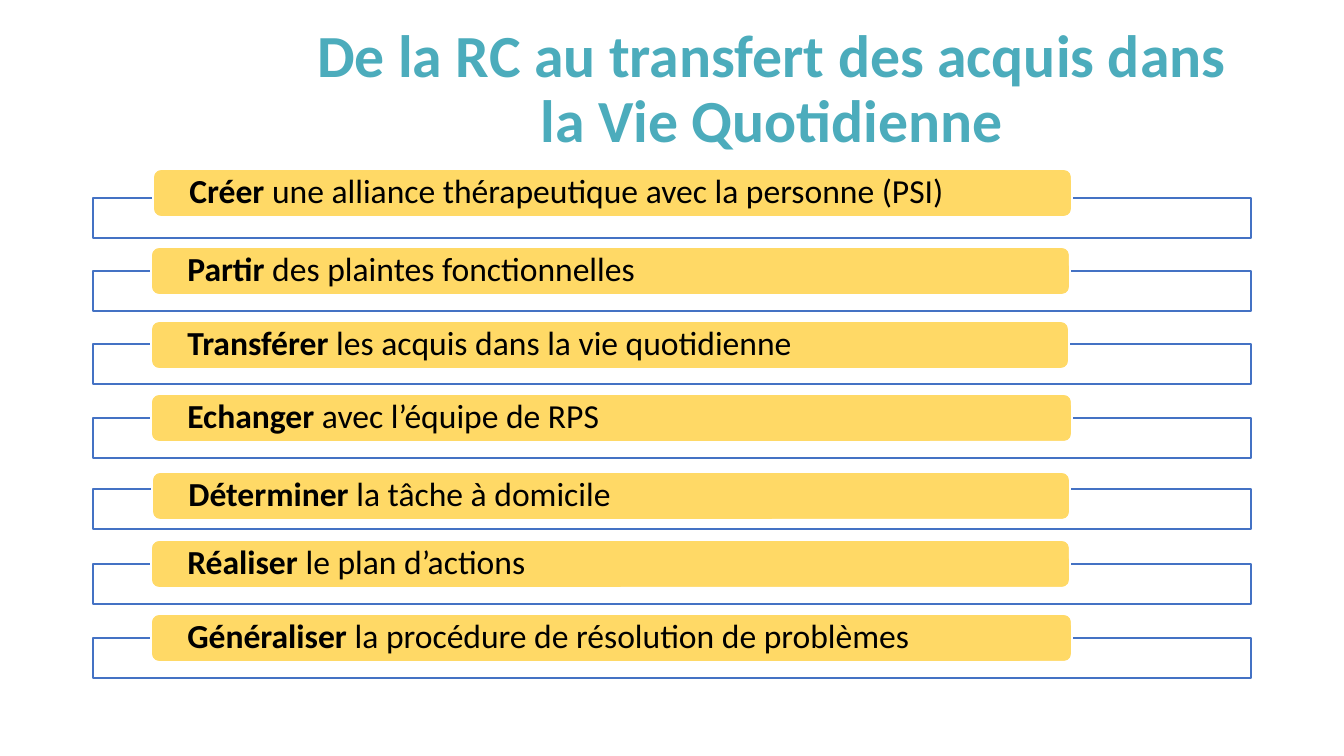
from typing import NamedTuple

from lxml.etree import SubElement
from pptx import Presentation
from pptx.dml.color import RGBColor
from pptx.enum.shapes import MSO_SHAPE as SHAPE
from pptx.enum.text import MSO_ANCHOR as ANCHOR, PP_ALIGN as ALIGN
from pptx.oxml.ns import qn
from pptx.util import Pt

EMU_PER_PX = 914400 / 134.4
COLORS = {
    "title": "4CACBC",
    "text": "000000",
    "bar": "FFD966",
    "frame": "4472C4",
    "white": "FFFFFF",
}
FRAME_X, FRAME_W, FRAME_H = 93, 1158, 40
BAR_H, BAR_INSET = 48, 34


class Step(NamedTuple):
    verb: str
    rest: str
    frame_y: int
    bar_x: int
    bar_y: int
    bar_w: int


STEPS = [
    Step("Créer", " une alliance thérapeutique avec la personne (PSI)", 198, 153, 169, 919),
    Step("Partir", " des plaintes fonctionnelles", 271, 151, 247, 919),
    Step("Transférer", " les acquis dans la vie quotidienne", 344, 151, 321, 918),
    Step("Echanger", " avec l’équipe de RPS", 418, 151, 394, 921),
    Step("Déterminer", " la tâche à domicile", 489, 152, 472, 918),
    Step("Réaliser", " le plan d’actions", 564, 151, 540, 919),
    Step("Généraliser", " la procédure de résolution de problèmes", 638, 151, 614, 921),
]


def px(n: int) -> int:
    return round(n * EMU_PER_PX)


def rgb(name: str) -> RGBColor:
    return RGBColor.from_string(COLORS[name])


def set_all(obj, values: dict) -> None:
    for name, value in values.items():
        setattr(obj, name, value)


def add_run(p, text: str, size: int, color: str, bold: bool) -> None:
    r = p.add_run()
    r.text = text
    set_all(r.font, {"name": "Calibri", "size": Pt(size), "bold": bold})
    r.font.color.rgb = rgb(color)


def add_box(s, kind, x: int, y: int, w: int, h: int, fill: str, line: str):
    sp = s.shapes.add_shape(kind, px(x), px(y), px(w), px(h))
    sp.shadow.inherit = False
    sp.fill.solid()
    sp.fill.fore_color.rgb = rgb(fill)
    sp.line.color.rgb = rgb(line)
    sp.line.width = Pt(1)
    return sp


def add_title(s, text: str) -> None:
    tf = s.shapes.add_textbox(px(292), px(40), px(960), px(101)).text_frame
    set_all(tf, {"word_wrap": True, "vertical_anchor": ANCHOR.MIDDLE})
    p = tf.paragraphs[0]
    set_all(p, {"alignment": ALIGN.CENTER, "line_spacing": 0.9})
    add_run(p, text, 32, "title", True)


def add_step(s, step: Step) -> None:
    """Draw the outlined frame and, over it, the labelled bar."""
    frame = add_box(s, SHAPE.RECTANGLE, FRAME_X, step.frame_y, FRAME_W, FRAME_H,
                    "white", "frame")
    fill_color = frame.fill._xPr.find(qn("a:solidFill"))[0]
    SubElement(fill_color, qn("a:alpha"), val="90000")

    bar = add_box(s, SHAPE.ROUNDED_RECTANGLE, step.bar_x, step.bar_y, step.bar_w, BAR_H,
                  "bar", "white")
    tf = bar.text_frame
    set_all(tf, {
        "word_wrap": True, "vertical_anchor": ANCHOR.MIDDLE,
        "margin_left": px(BAR_INSET), "margin_right": px(BAR_INSET),
        "margin_top": 0, "margin_bottom": 0,
    })
    p = tf.paragraphs[0]
    set_all(p, {"alignment": ALIGN.LEFT, "line_spacing": 0.9})
    add_run(p, step.verb, 18, "text", True)
    add_run(p, step.rest, 18, "text", False)


def main() -> None:
    prs = Presentation()
    set_all(prs, {"slide_width": px(1344), "slide_height": px(756)})
    s = prs.slides.add_slide(prs.slide_layouts[6])
    add_title(s, "De la RC au transfert des acquis dans la Vie Quotidienne")
    for step in STEPS:
        add_step(s, step)
    prs.save("out.pptx")


if __name__ == "__main__":
    main()
